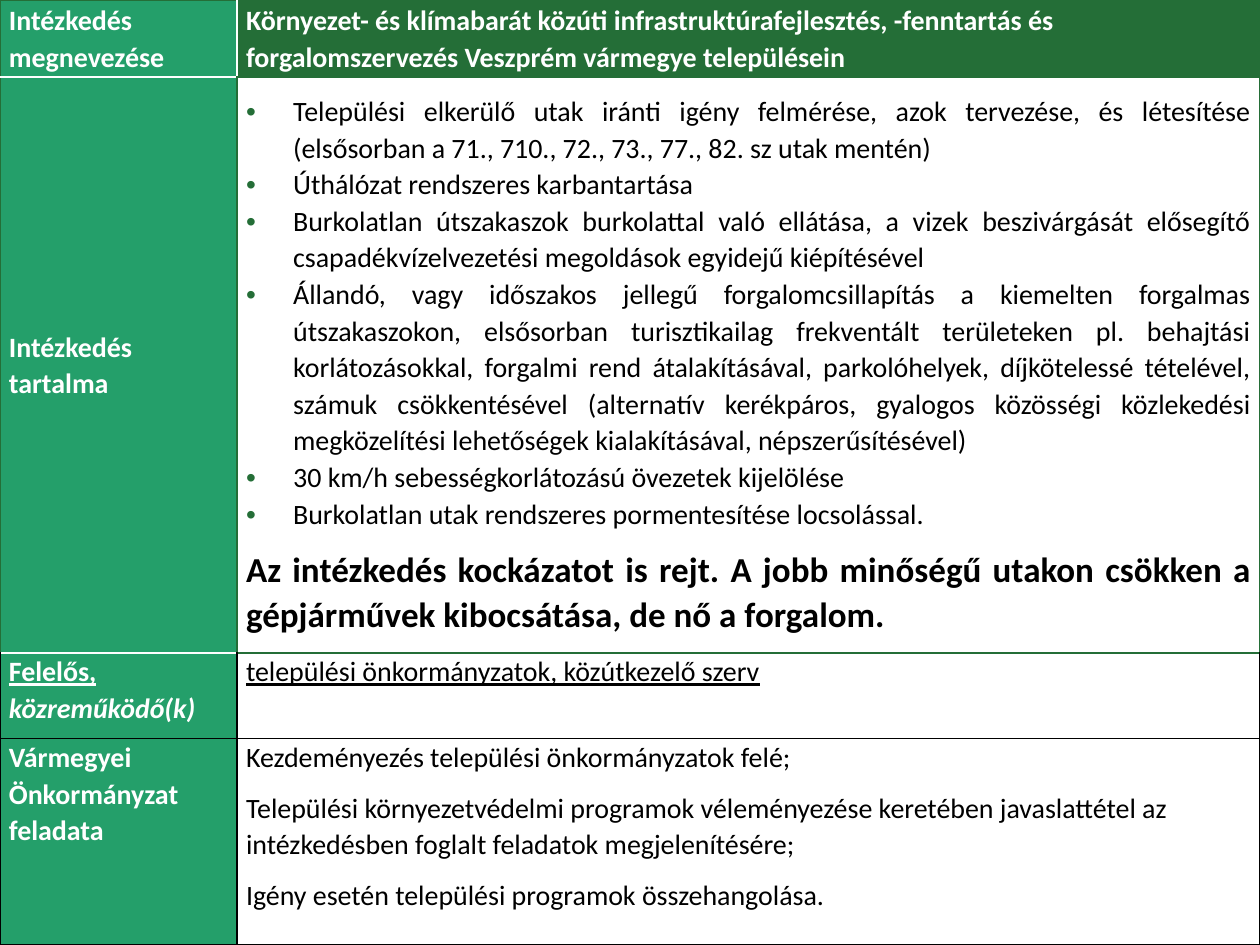
from dataclasses import dataclass
from typing import Optional

from lxml import etree
from pptx import Presentation
from pptx.dml.color import RGBColor
from pptx.enum.text import MSO_ANCHOR, PP_ALIGN
from pptx.oxml.ns import qn
from pptx.util import Cm, Pt

TOP, MIDDLE = MSO_ANCHOR.TOP, MSO_ANCHOR.MIDDLE
LEFT, JUSTIFY = PP_ALIGN.LEFT, PP_ALIGN.JUSTIFY
COLORS = {"dark": "246E37", "green": "249F6A", "white": "FFFFFF", "black": "000000"}
COL_WIDTHS = (4.78, 20.62)
ROW_HEIGHTS = (1.55, 11.61, 1.73, 4.16)


@dataclass
class Run:
    text: str
    color: str = "black"
    size: int = 16
    bold: bool = False
    italic: bool = False
    underline: bool = False


@dataclass
class Para:
    runs: list[Run]
    align: PP_ALIGN = LEFT
    bullet: bool = False
    after: int = 8


@dataclass
class CellSpec:
    paras: list[Para]
    borders: tuple[str, str, str, str]
    fill: Optional[str] = None
    anchor: MSO_ANCHOR = TOP


def text(content: str, align: PP_ALIGN = LEFT, bullet: bool = False,
         after: int = 8, **style) -> Para:
    """Make a one-run paragraph from text and its format."""
    return Para([Run(content, **style)], align, bullet, after)


def heading(content: str) -> list[Para]:
    """Make the bold white text of a heading cell."""
    return [text(content, color="white", bold=True)]


def add_bullet(p) -> None:
    """Give a paragraph a hanging green bullet."""
    pPr = p._p.get_or_add_pPr()
    indent = Cm(0.95)
    pPr.set("marL", str(indent))
    pPr.set("indent", str(-indent))
    color = etree.SubElement(pPr, qn("a:buClr"))
    etree.SubElement(color, qn("a:srgbClr"), val=COLORS["dark"])
    etree.SubElement(pPr, qn("a:buFont"), typeface="Arial")
    etree.SubElement(pPr, qn("a:buChar"), char="•")


def set_borders(cell, colors: tuple[str, str, str, str]) -> None:
    """Draw the left, right, top and bottom borders of a cell."""
    tcPr = cell._tc.get_or_add_tcPr()
    for i, (side, color) in enumerate(zip("LRTB", colors)):
        ln = etree.Element(qn(f"a:ln{side}"), w=str(Pt(1)))
        fill = etree.SubElement(ln, qn("a:solidFill"))
        etree.SubElement(fill, qn("a:srgbClr"), val=COLORS[color])
        tcPr.insert(i, ln)


def write_para(p, para: Para) -> None:
    """Write one paragraph with its runs."""
    p.alignment = para.align
    p.line_spacing = 1.07
    p.space_after = Pt(para.after)
    if para.bullet:
        add_bullet(p)
    for run in para.runs:
        r = p.add_run()
        r.text = run.text
        font = r.font
        font.name, font.size = "Calibri", Pt(run.size)
        font.bold, font.italic, font.underline = run.bold, run.italic, run.underline
        font.color.rgb = RGBColor.from_string(COLORS[run.color])


def fill_cell(cell, spec: CellSpec) -> None:
    """Format a table cell and write its text."""
    cell.margin_left = cell.margin_right = Cm(0.18)
    cell.margin_top = cell.margin_bottom = Cm(0)
    cell.vertical_anchor = spec.anchor
    if spec.fill:
        cell.fill.solid()
        cell.fill.fore_color.rgb = RGBColor.from_string(COLORS[spec.fill])
    else:
        cell.fill.background()
    set_borders(cell, spec.borders)
    tf = cell.text_frame
    for i, para in enumerate(spec.paras):
        write_para(tf.add_paragraph() if i else tf.paragraphs[0], para)


MEASURES = (
    "Települési elkerülő utak iránti igény felmérése, azok tervezése, és létesítése "
    "(elsősorban a 71., 710., 72., 73., 77., 82. sz utak mentén)",
    "Úthálózat rendszeres karbantartása",
    "Burkolatlan útszakaszok burkolattal való ellátása, a vizek beszivárgását elősegítő "
    "csapadékvízelvezetési megoldások egyidejű kiépítésével",
    "Állandó, vagy időszakos jellegű forgalomcsillapítás a kiemelten forgalmas "
    "útszakaszokon, elsősorban turisztikailag frekventált területeken pl. behajtási "
    "korlátozásokkal, forgalmi rend átalakításával, parkolóhelyek, díjkötelessé tételével, "
    "számuk csökkentésével (alternatív kerékpáros, gyalogos közösségi közlekedési "
    "megközelítési lehetőségek kialakításával, népszerűsítésével)",
    "30 km/h sebességkorlátozású övezetek kijelölése",
    "Burkolatlan utak rendszeres pormentesítése locsolással.",
)
RISK = ("Az intézkedés kockázatot is rejt. A jobb minőségű utakon csökken a "
        "gépjárművek kibocsátása, de nő a forgalom.")
TASKS = (
    "Kezdeményezés települési önkormányzatok felé;",
    "Települési környezetvédelmi programok véleményezése keretében javaslattétel az "
    "intézkedésben foglalt feladatok megjelenítésére;",
    "Igény esetén települési programok összehangolása.",
)
TITLE = ("Környezet- és klímabarát közúti infrastruktúrafejlesztés, -fenntartás és "
         "forgalomszervezés Veszprém vármegye településein")

measure_paras = [text(m, align=JUSTIFY, bullet=True, after=8 if m == MEASURES[-1] else 0)
                 for m in MEASURES]
risk_para = text(RISK, align=JUSTIFY, size=20, bold=True)
responsible = Para([Run("Felelős, ", "white", bold=True, underline=True),
                    Run("közreműködő(k)", "white", bold=True, italic=True)])
partners = text("települési önkormányzatok, közútkezelő szerv", underline=True)

ROWS = (
    (CellSpec(heading("Intézkedés megnevezése"),
              ("dark", "white", "dark", "white"), "green", MIDDLE),
     CellSpec(heading(TITLE), ("white", "dark", "dark", "dark"), "dark", MIDDLE)),
    (CellSpec(heading("Intézkedés tartalma"),
              ("dark", "dark", "white", "white"), "green", MIDDLE),
     CellSpec(measure_paras + [risk_para], ("dark",) * 4, anchor=MIDDLE)),
    (CellSpec([responsible], ("black", "black", "white", "black"), "green"),
     CellSpec([partners], ("black", "black", "dark", "black"))),
    (CellSpec(heading("Vármegyei Önkormányzat feladata"), ("black",) * 4, "green"),
     CellSpec([text(task) for task in TASKS], ("black",) * 4)),
)


def main() -> None:
    """Build the slide with the measure table."""
    prs = Presentation()
    prs.slide_width, prs.slide_height = Cm(25.4), Cm(19.05)
    s = prs.slides.add_slide(prs.slide_layouts[6])
    table = s.shapes.add_table(len(ROWS), len(COL_WIDTHS), Cm(0), Cm(0),
                               prs.slide_width, prs.slide_height).table
    table.first_row = table.horz_banding = False
    for column, width in zip(table.columns, COL_WIDTHS):
        column.width = Cm(width)
    for row, height, specs in zip(table.rows, ROW_HEIGHTS, ROWS):
        row.height = Cm(height)
        for cell, spec in zip(row.cells, specs):
            fill_cell(cell, spec)
    prs.save("out.pptx")


if __name__ == "__main__":
    main()
